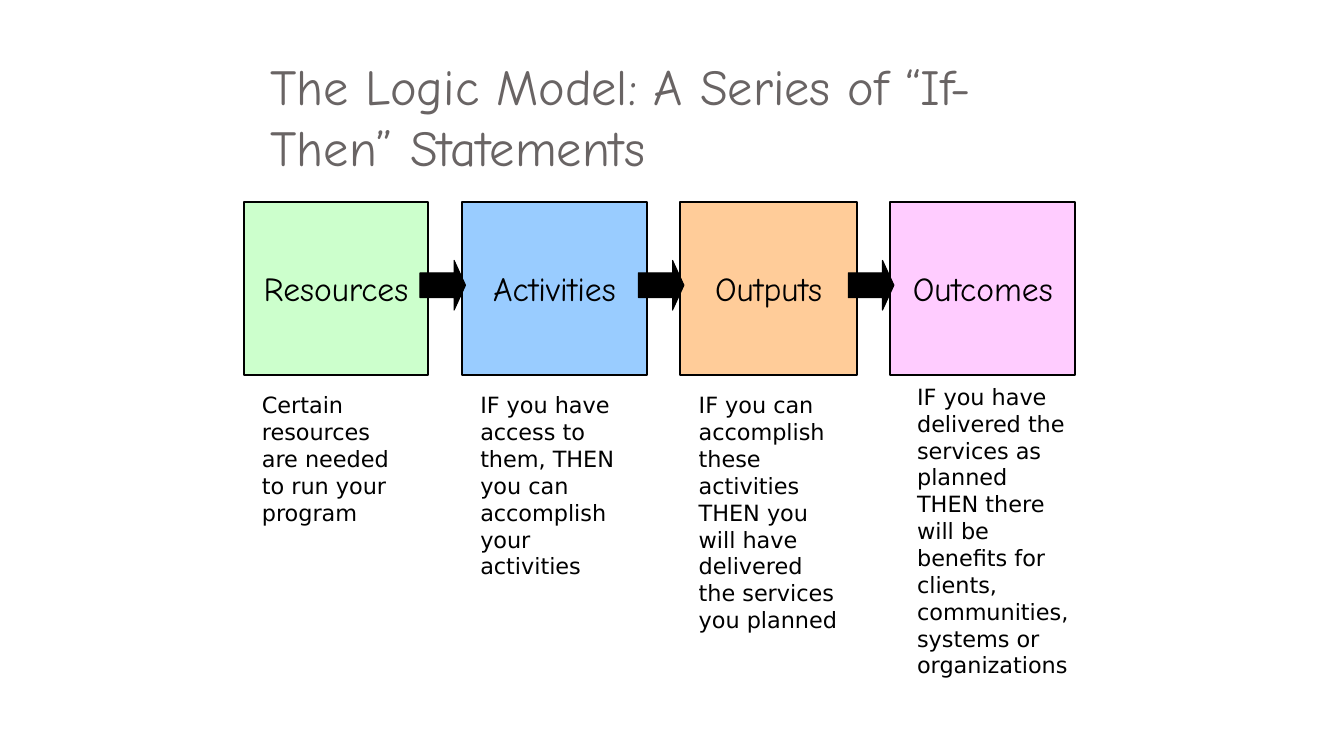
from pptx import Presentation
from pptx.dml.color import RGBColor
from pptx.enum.shapes import MSO_SHAPE
from pptx.enum.text import MSO_ANCHOR, PP_ALIGN
from pptx.util import Pt

RECTANGLE = MSO_SHAPE.RECTANGLE
RIGHT_ARROW = MSO_SHAPE.RIGHT_ARROW
TOP, MIDDLE = MSO_ANCHOR.TOP, MSO_ANCHOR.MIDDLE
LEFT, CENTER = PP_ALIGN.LEFT, PP_ALIGN.CENTER

HEADING_FONT, BODY_FONT = "Comic Neue", "DejaVu Sans"
BOX_TOP, BOX_HEIGHT = 144, 124
ARROW_TOP, ARROW_WIDTH, ARROW_HEIGHT, ARROW_OVERLAP = 186, 32.5, 35.5, 6
NOTE_LEFT, NOTE_STEP = 180, 156

# label, fill, box left, box width, note top, note width, note height, note
STAGES = [
    ("Resources", "CCFFCC", 174, 132, 276, 114, 104,
     "Certain resources are needed to run your program"),
    ("Activities", "99CCFF", 330, 132, 276, 114, 142,
     "IF you have access to them, THEN you can accomplish your activities"),
    ("Outputs", "FFCC99", 486, 126, 276, 114, 181,
     "IF you can accomplish these activities THEN you will have delivered "
     "the services you planned"),
    ("Outcomes", "FFCCFF", 636, 132, 270, 126, 219,
     "IF you have delivered the services as planned THEN there will be "
     "benefits for clients, communities, systems or organizations"),
]


def write_text(shape, text, font_name, size, color, alignment, anchor):
    frame = shape.text_frame
    frame.text = text
    frame.word_wrap = True
    frame.vertical_anchor = anchor
    paragraph = frame.paragraphs[0]
    paragraph.alignment = alignment
    font_format = {"name": font_name, "size": Pt(size), "bold": False}
    for attribute, value in font_format.items():
        setattr(paragraph.runs[0].font, attribute, value)
    paragraph.runs[0].font.color.rgb = RGBColor.from_string(color)


def add_filled_shape(kind, left, top, width, height, fill, line_width):
    shape = slide.shapes.add_shape(kind, Pt(left), Pt(top), Pt(width), Pt(height))
    shape.shadow.inherit = False
    shape.fill.solid()
    shape.fill.fore_color.rgb = RGBColor.from_string(fill)
    shape.line.color.rgb = RGBColor.from_string("000000")
    shape.line.width = Pt(line_width)
    return shape


presentation = Presentation()
presentation.slide_width, presentation.slide_height = Pt(960), Pt(540)
slide = presentation.slides.add_slide(presentation.slide_layouts[5])

title = slide.shapes.title
title_place = {"left": 186, "top": 36, "width": 534, "height": 94}
for attribute, value in title_place.items():
    setattr(title, attribute, Pt(value))
write_text(title, "The Logic Model: A Series of “If-Then” Statements",
           HEADING_FONT, 36, "696464", LEFT, TOP)

for index, stage in enumerate(STAGES):
    label, fill, left, width, note_top, note_width, note_height, note = stage
    box = add_filled_shape(RECTANGLE, left, BOX_TOP, width, BOX_HEIGHT, fill, 1.5)
    write_text(box, label, HEADING_FONT, 24, "000000", CENTER, MIDDLE)
    note_box = slide.shapes.add_textbox(
        Pt(NOTE_LEFT + index * NOTE_STEP), Pt(note_top), Pt(note_width), Pt(note_height))
    write_text(note_box, note, BODY_FONT, 16, "000000", LEFT, TOP)

# Arrows come last so that they lie over the boxes on both sides
for label, fill, left, width, *note_details in STAGES[:-1]:
    arrow = add_filled_shape(RIGHT_ARROW, left + width - ARROW_OVERLAP, ARROW_TOP,
                             ARROW_WIDTH, ARROW_HEIGHT, "000000", 0.75)
    arrow.adjustments[0] = 0.5
    arrow.adjustments[1] = 0.25

presentation.save("out.pptx")
